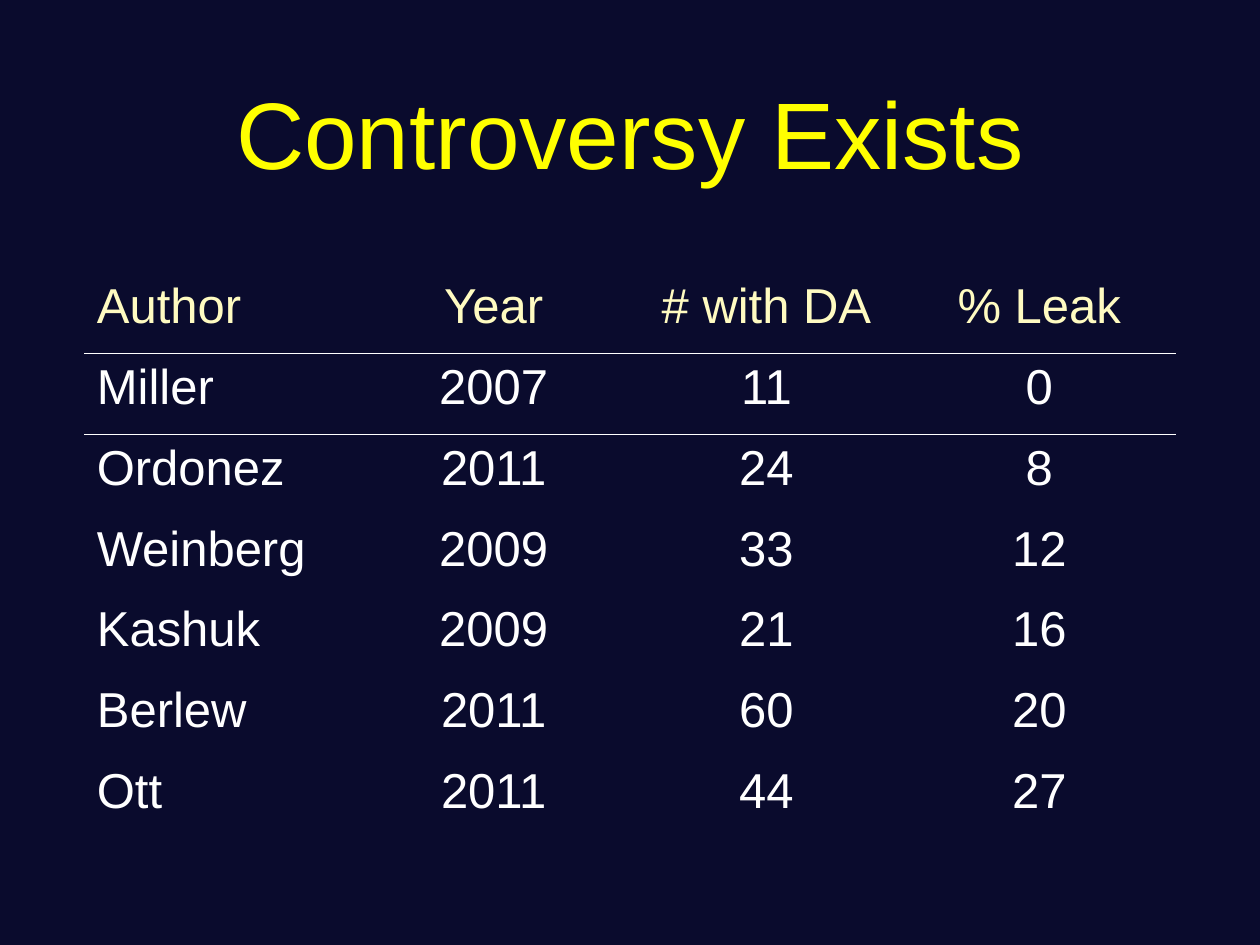
"""Build a slide with a table of leak rates by author."""
from dataclasses import dataclass

import lxml.etree
import pptx
import pptx.dml.color
import pptx.enum.text
import pptx.oxml.ns
import pptx.slide
import pptx.table
import pptx.text.text
import pptx.util
from pptx.util import Cm

BACKGROUND = "0A0B2D"
TITLE_COLOR = "FFFF00"
HEADER_COLOR = "FFFBC1"
BODY_COLOR = "FFFFFF"
FONT = "Arial"
PLAIN_TABLE_STYLE = "{2D5ABB26-0587-4C30-8999-92F81FD0307C}"
COLUMN_WIDTH = Cm(5.5)
ROW_HEIGHT = Cm(1.63)


@dataclass
class Study:
    author: str
    year: str
    cases: str
    leak: str

    def values(self) -> list[str]:
        return [self.author, self.year, self.cases, self.leak]


HEADER = Study("Author", "Year", "# with DA", "% Leak")
STUDIES = [
    Study("Miller", "2007", "11", "0"),
    Study("Ordonez", "2011", "24", "8"),
    Study("Weinberg", "2009", "33", "12"),
    Study("Kashuk", "2009", "21", "16"),
    Study("Berlew", "2011", "60", "20"),
    Study("Ott", "2011", "44", "27"),
]


def rgb(color: str) -> pptx.dml.color.RGBColor:
    return pptx.dml.color.RGBColor.from_string(color)


def write(paragraph: pptx.text.text._Paragraph, text: str, size: int, color: str, centered: bool) -> None:
    alignment = pptx.enum.text.PP_ALIGN
    paragraph.alignment = alignment.CENTER if centered else alignment.LEFT
    run = paragraph.add_run()
    run.text = text
    run.font.name = FONT
    run.font.size = pptx.util.Pt(size)
    run.font.bold = False
    run.font.color.rgb = rgb(color)


def add_border(cell: pptx.table._Cell, side: str, color: str) -> None:
    qn = pptx.oxml.ns.qn
    line = lxml.etree.Element(qn(f"a:{side}"), w=str(pptx.util.Pt(1)))
    fill = lxml.etree.SubElement(line, qn("a:solidFill"))
    lxml.etree.SubElement(fill, qn("a:srgbClr"), val=color)
    cell._tc.get_or_add_tcPr().insert(0, line)


def add_title(slide: pptx.slide.Slide, text: str) -> None:
    title = slide.shapes.title
    title.left, title.top, title.width, title.height = Cm(0), Cm(1.07), Cm(25.4), Cm(3.17)
    title.text_frame.vertical_anchor = pptx.enum.text.MSO_ANCHOR.MIDDLE
    write(title.text_frame.paragraphs[0], text, 54, TITLE_COLOR, True)


def add_study_table(slide: pptx.slide.Slide, header: Study, studies: list[Study]) -> None:
    rows = [header, *studies]
    column_count = len(header.values())
    frame = slide.shapes.add_table(
        len(rows), column_count, Cm(1.7), Cm(5.5),
        COLUMN_WIDTH * column_count, ROW_HEIGHT * len(rows),
    )
    table = frame.table
    table.first_row = table.horz_banding = False
    table._tbl.tblPr.find(pptx.oxml.ns.qn("a:tableStyleId")).text = PLAIN_TABLE_STYLE
    for row_index, study in enumerate(rows):
        color = BODY_COLOR if row_index else HEADER_COLOR
        for column_index, text in enumerate(study.values()):
            cell = table.cell(row_index, column_index)
            cell.fill.background()
            write(cell.text_frame.paragraphs[0], text, 28, color, column_index > 0)
            if row_index < 2:
                add_border(cell, "lnT" if row_index else "lnB", BODY_COLOR)


def main() -> None:
    presentation = pptx.Presentation()
    presentation.slide_width, presentation.slide_height = Cm(25.4), Cm(19.05)
    slide = presentation.slides.add_slide(presentation.slide_layouts.get_by_name("Title Only"))
    slide.background.fill.solid()
    slide.background.fill.fore_color.rgb = rgb(BACKGROUND)
    add_title(slide, "Controversy Exists")
    add_study_table(slide, HEADER, STUDIES)
    presentation.save("out.pptx")


if __name__ == "__main__":
    main()
